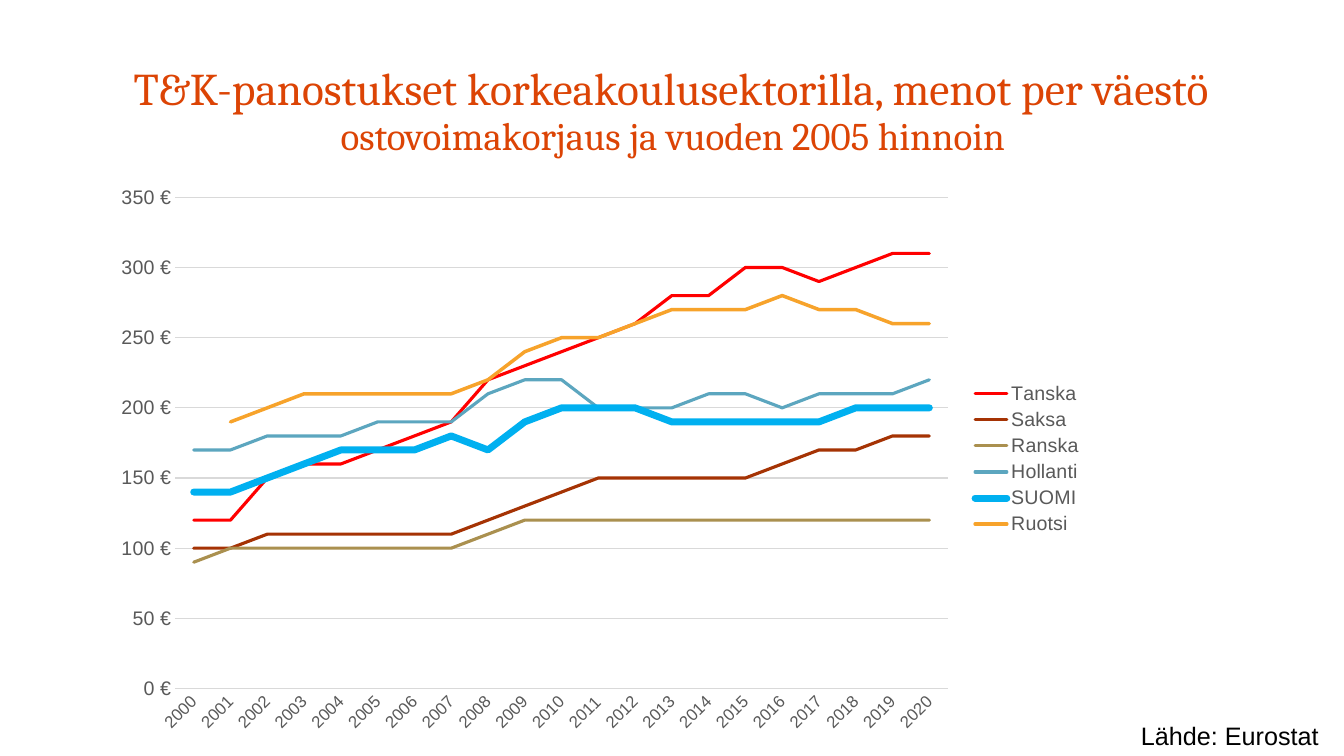
from lxml import etree
from pptx import Presentation
from pptx.chart.data import CategoryChartData
from pptx.dml.color import RGBColor
from pptx.enum.chart import XL_CHART_TYPE, XL_LEGEND_POSITION, XL_MARKER_STYLE, XL_TICK_MARK
from pptx.enum.text import MSO_ANCHOR, MSO_AUTO_SIZE, PP_ALIGN
from pptx.oxml import parse_xml
from pptx.oxml.ns import nsdecls, qn
from pptx.util import Cm, Pt

LINE_CHART = XL_CHART_TYPE.LINE
LEGEND_RIGHT = XL_LEGEND_POSITION.RIGHT
NO_MARKER = XL_MARKER_STYLE.NONE
NO_TICK = XL_TICK_MARK.NONE
MIDDLE = MSO_ANCHOR.MIDDLE
NO_AUTOFIT = MSO_AUTO_SIZE.NONE
FIT_SHAPE = MSO_AUTO_SIZE.SHAPE_TO_FIT_TEXT
CENTER = PP_ALIGN.CENTER

ORANGE = RGBColor(0xDC, 0x44, 0x05)
BLACK = RGBColor(0, 0, 0)
GREY_TEXT = RGBColor(0x59, 0x59, 0x59)
GREY_LINE = RGBColor(0xD9, 0xD9, 0xD9)
RED = RGBColor(0xFF, 0, 0)
BROWN = RGBColor(0xA5, 0x33, 0x04)
OLIVE = RGBColor(0xAA, 0x90, 0x4F)
TEAL = RGBColor(0x5C, 0xA6, 0xBF)
SKY_BLUE = RGBColor(0, 0xB0, 0xF0)
AMBER = RGBColor(0xF7, 0xA3, 0x2B)

# Country, line colour, line width in points, euros per inhabitant 2000-2020
COUNTRIES = [
    ("Tanska", RED, 2.25, [120, 120, 150, 160, 160, 170, 180, 190, 220, 230, 240,
                           250, 260, 280, 280, 300, 300, 290, 300, 310, 310]),
    ("Saksa", BROWN, 2.25, [100, 100, 110, 110, 110, 110, 110, 110, 120, 130, 140,
                            150, 150, 150, 150, 150, 160, 170, 170, 180, 180]),
    ("Ranska", OLIVE, 2.25, [90, 100, 100, 100, 100, 100, 100, 100, 110, 120, 120,
                             120, 120, 120, 120, 120, 120, 120, 120, 120, 120]),
    ("Hollanti", TEAL, 2.25, [170, 170, 180, 180, 180, 190, 190, 190, 210, 220, 220,
                              200, 200, 200, 210, 210, 200, 210, 210, 210, 220]),
    ("SUOMI", SKY_BLUE, 5, [140, 140, 150, 160, 170, 170, 170, 180, 170, 190, 200,
                            200, 200, 190, 190, 190, 190, 190, 200, 200, 200]),
    ("Ruotsi", AMBER, 2.5, [None, 190, 200, 210, 210, 210, 210, 210, 220, 240, 250,
                            250, 260, 270, 270, 270, 280, 270, 270, 260, 260]),
]


def style_font(font, name, size, color):
    font.name = name
    font.size = Pt(size)
    font.color.rgb = color


def add_run(paragraph, text, name, size, color):
    run = paragraph.add_run()
    run.text = text
    style_font(run.font, name, size, color)


presentation = Presentation()
presentation.slide_width = Cm(33.87)
presentation.slide_height = Cm(19.05)
slide = presentation.slides.add_slide(presentation.slide_layouts[5])

# Title
title = slide.shapes.title
title.left, title.top, title.width, title.height = Cm(0.9), Cm(0.89), Cm(32.33), Cm(3.68)
title.text_frame.auto_size = NO_AUTOFIT
title.text_frame.vertical_anchor = MIDDLE
paragraph = title.text_frame.paragraphs[0]
paragraph.alignment = CENTER
paragraph.line_spacing = 0.9
add_run(paragraph, "T&K-panostukset korkeakoulusektorilla, menot per väestö",
        "Cambria", 32.4, ORANGE)
add_run(paragraph, " ", "Cambria", 39.6, ORANGE)
paragraph.add_line_break()
add_run(paragraph, "ostovoimakorjaus ja vuoden 2005 hinnoin ", "Cambria", 27.9, ORANGE)

# Line chart
chart_data = CategoryChartData()
chart_data.categories = [str(year) for year in range(2000, 2021)]
for country, color, width, values in COUNTRIES:
    chart_data.add_series(country, values)
chart = slide.shapes.add_chart(LINE_CHART, Cm(2.57), Cm(4.4), Cm(24.99), Cm(14.33),
                               chart_data).chart
chart.has_title = False
style_font(chart.font, "Arial", 10, BLACK)
chart.plots[0].vary_by_categories = False
for series, (country, color, width, values) in zip(chart.plots[0].series, COUNTRIES):
    series.smooth = False
    series.marker.style = NO_MARKER
    line = series.format.line
    line.color.rgb = color
    line.width = Pt(width)
    line_element = series._element.find(qn("c:spPr")).find(qn("a:ln"))
    line_element.set("cap", "rnd")
    etree.SubElement(line_element, qn("a:round"))

# Axes
year_axis = chart.category_axis
style_font(year_axis.tick_labels.font, "Arial", 12, GREY_TEXT)
year_axis.format.line.color.rgb = GREY_LINE
year_axis.format.line.width = Pt(0.75)
year_labels = year_axis._element.find(qn("c:txPr")).find(qn("a:bodyPr"))
year_labels.set("rot", "-2700000")
year_labels.set("vert", "horz")

euro_axis = chart.value_axis
euro_axis.minimum_scale = 0
euro_axis.maximum_scale = 350
euro_axis.major_unit = 50
style_font(euro_axis.tick_labels.font, "Arial", 14, GREY_TEXT)
euro_axis.tick_labels.number_format = '#,##0\\ "€"'
euro_axis.tick_labels.number_format_is_linked = False
euro_axis.format.line.fill.background()
euro_axis.major_gridlines.format.line.color.rgb = GREY_LINE
euro_axis.major_gridlines.format.line.width = Pt(0.75)
for axis in (year_axis, euro_axis):
    axis.major_tick_mark = NO_TICK
    axis.minor_tick_mark = NO_TICK

# Legend
chart.has_legend = True
chart.legend.position = LEGEND_RIGHT
chart.legend.include_in_layout = False
style_font(chart.legend.font, "Arial", 14, GREY_TEXT)

# Plot area position, as shares of the chart
plot_area = chart._chartSpace.chart.plotArea
for layout in plot_area.findall(qn("c:layout")):
    plot_area.remove(layout)
plot_area.insert(0, parse_xml(
    f'<c:layout {nsdecls("c")}><c:manualLayout><c:layoutTarget val="inner"/>'
    '<c:xMode val="edge"/><c:yMode val="edge"/><c:x val="0.074"/><c:y val="0.04"/>'
    '<c:w val="0.779"/><c:h val="0.864"/></c:manualLayout></c:layout>'))

# Source note
source_note = slide.shapes.add_textbox(Cm(28.5), Cm(18.03), Cm(5.03), Cm(1.02))
source_note.text_frame.word_wrap = False
source_note.text_frame.auto_size = FIT_SHAPE
add_run(source_note.text_frame.paragraphs[0], "Lähde: Eurostat", "Arial", 18, BLACK)

presentation.save("out.pptx")
